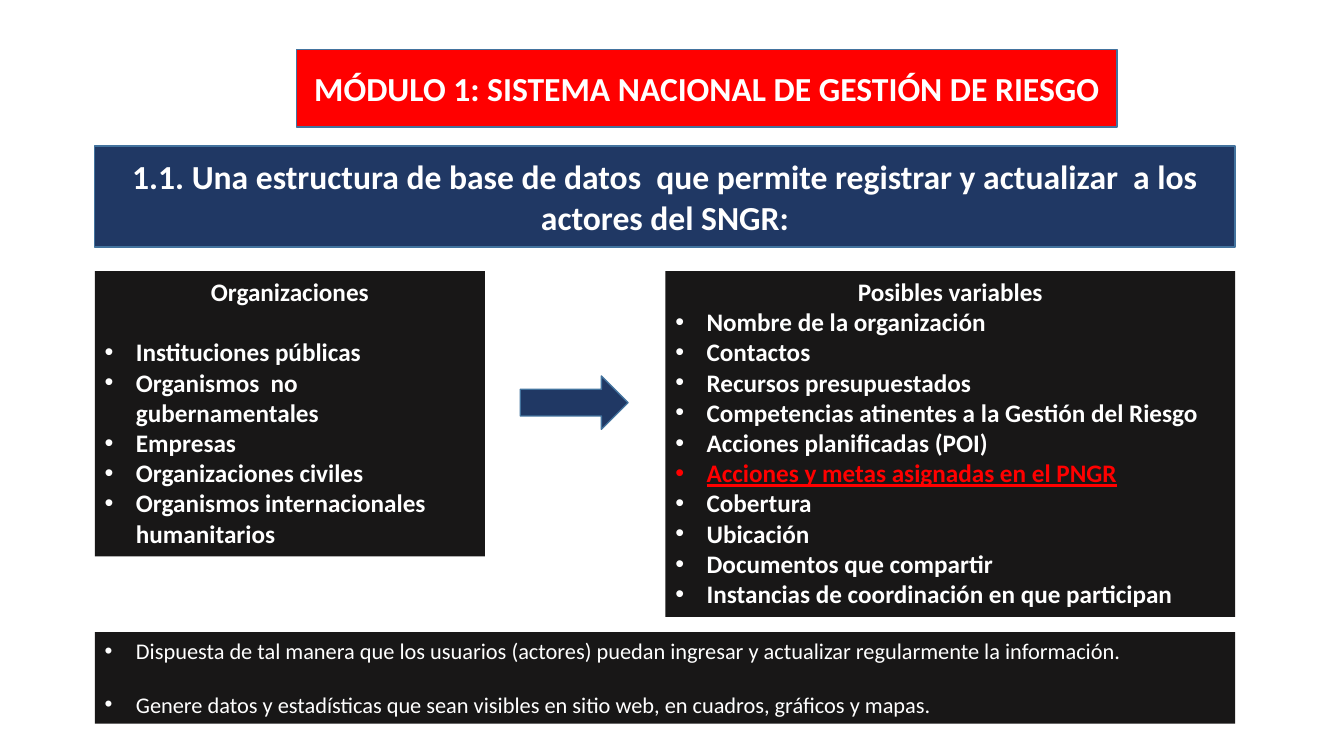
"""Builds the slide on the actors database of the national risk management system."""
import pptx
import pptx.dml.color
import pptx.enum.shapes
import pptx.enum.text
import pptx.util
from lxml import etree
from pptx.oxml.ns import qn

Inches, Pt = pptx.util.Inches, pptx.util.Pt
SHAPE = pptx.enum.shapes.MSO_SHAPE
ALIGN = pptx.enum.text.PP_ALIGN
ANCHOR = pptx.enum.text.MSO_ANCHOR
AUTO_SIZE = pptx.enum.text.MSO_AUTO_SIZE

RED, NAVY, BLACK, WHITE, EDGE = "FF0000", "203864", "181717", "FFFFFF", "43739E"

MODULE = "MÓDULO 1: SISTEMA NACIONAL DE GESTIÓN DE RIESGO"
SECTION = ("1.1. Una estructura de base de datos  que permite registrar y actualizar"
           "  a los actores del SNGR:")
ORGANIZATIONS = [
    "Instituciones públicas",
    "Organismos  no gubernamentales",
    "Empresas",
    "Organizaciones civiles",
    "Organismos internacionales humanitarios",
]
HIGHLIGHT = "Acciones y metas asignadas en el PNGR"
VARIABLES = [
    "Nombre de la organización",
    "Contactos",
    "Recursos presupuestados",
    "Competencias atinentes a la Gestión del Riesgo",
    "Acciones planificadas (POI)",
    HIGHLIGHT,
    "Cobertura",
    "Ubicación",
    "Documentos que compartir",
    "Instancias de coordinación en que participan",
]
REQUIREMENTS = [
    "Dispuesta de tal manera que los usuarios (actores) puedan ingresar y actualizar "
    "regularmente la información.",
    "Genere datos y estadísticas que sean visibles en sitio web, en cuadros, gráficos y mapas.",
]

LEFT, WIDTH, PANEL_TOP = 0.94, 11.31, 2.69
VARIABLES_WIDTH = 5.65
VARIABLES_LEFT = LEFT + WIDTH - VARIABLES_WIDTH


def rgb(code):
    return pptx.dml.color.RGBColor.from_string(code)


def add_block(slide, box, fill, edge=None, preset=SHAPE.RECTANGLE):
    block = slide.shapes.add_shape(preset, *map(Inches, box))
    block.shadow.inherit = False
    block.fill.solid()
    block.fill.fore_color.rgb = rgb(fill)
    if edge:
        block.line.color.rgb = rgb(edge)
        block.line.width = Pt(1)
    else:
        block.line.fill.background()
    return block


def style(paragraph, size, bold, align, color=WHITE):
    paragraph.alignment = align
    font = paragraph.font
    font.name, font.size, font.bold = "Calibri", Pt(size), bold
    font.color.rgb = rgb(color)


def add_bullet(paragraph, color):
    properties = paragraph._p.get_or_add_pPr()
    properties.set("marL", str(Inches(0.31)))
    properties.set("indent", str(-Inches(0.31)))
    bullet_color = etree.SubElement(properties, qn("a:buClr"))
    etree.SubElement(bullet_color, qn("a:srgbClr"), val=color)
    etree.SubElement(properties, qn("a:buFont"), typeface="Arial")
    etree.SubElement(properties, qn("a:buChar"), char="•")


def add_banner(slide, box, fill, text):
    frame = add_block(slide, box, fill, EDGE).text_frame
    frame.word_wrap = True
    frame.vertical_anchor = ANCHOR.MIDDLE
    frame.text = text
    style(frame.paragraphs[0], 24, True, ALIGN.CENTER)


def add_panel(slide, box, heading, items, size, bold, heading_gap=0, item_gap=0):
    frame = add_block(slide, box, BLACK).text_frame
    frame.word_wrap = True
    frame.auto_size = AUTO_SIZE.SHAPE_TO_FIT_TEXT
    frame.vertical_anchor = ANCHOR.TOP
    headings = [heading] if heading else []
    frame.text = "\n".join(headings + items)
    for paragraph in frame.paragraphs[:len(headings)]:
        style(paragraph, size, bold, ALIGN.CENTER)
        paragraph.space_after = Pt(heading_gap)
    bullets = frame.paragraphs[len(headings):]
    for paragraph in bullets:
        color = RED if paragraph.text == HIGHLIGHT else WHITE
        add_bullet(paragraph, color)
        style(paragraph, size, bold, ALIGN.LEFT, color)
        if color == RED:
            paragraph.font.underline = True
    for paragraph in bullets[:-1]:
        paragraph.space_after = Pt(item_gap)


def main():
    deck = pptx.Presentation()
    deck.slide_width, deck.slide_height = Inches(13.33), Inches(7.5)
    slide = deck.slides.add_slide(deck.slide_layouts[6])
    add_banner(slide, (2.94, 0.49, 8.14, 0.77), RED, MODULE)
    add_banner(slide, (LEFT, 1.45, WIDTH, 1), NAVY, SECTION)
    add_panel(slide, (LEFT, PANEL_TOP, 3.87, 2.83), "Organizaciones", ORGANIZATIONS,
              18, True, heading_gap=21.6)
    add_panel(slide, (VARIABLES_LEFT, PANEL_TOP, VARIABLES_WIDTH, 3.43),
              "Posibles variables", VARIABLES, 18, True)
    add_block(slide, (5.16, 3.73, 1.07, 0.53), NAVY, EDGE, SHAPE.RIGHT_ARROW)
    add_panel(slide, (LEFT, 6.27, WIDTH, 0.91), None, REQUIREMENTS, 16, False, item_gap=19.2)
    deck.save("out.pptx")


if __name__ == "__main__":
    main()
